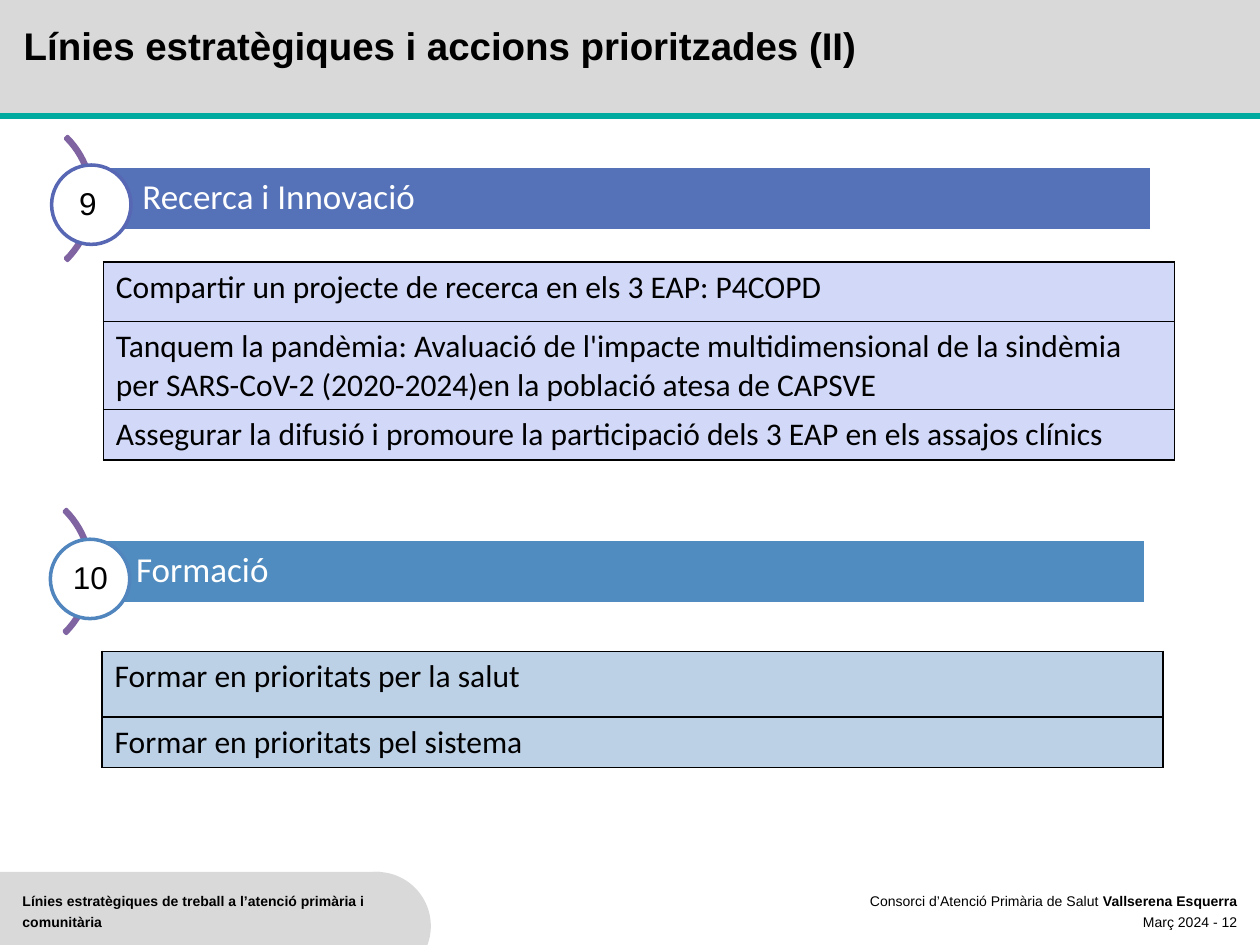
from lxml.etree import SubElement
from pptx import Presentation
from pptx.dml.color import RGBColor
from pptx.enum.shapes import MSO_CONNECTOR, MSO_SHAPE
from pptx.enum.text import MSO_ANCHOR, PP_ALIGN
from pptx.oxml.ns import qn
from pptx.util import Inches, Pt

BLACK = RGBColor(0x00, 0x00, 0x00)
WHITE = RGBColor(0xFF, 0xFF, 0xFF)
GREY = RGBColor(0xD9, 0xD9, 0xD9)
TEAL = RGBColor(0x00, 0xAA, 0x9E)
PURPLE = RGBColor(0x80, 0x64, 0xA2)
INDIGO = RGBColor(0x55, 0x72, 0xB8)
INDIGO_RING = RGBColor(0x57, 0x67, 0xB4)
LAVENDER = RGBColor(0xD2, 0xD8, 0xF7)
BLUE = RGBColor(0x50, 0x8C, 0xBF)
BLUE_RING = RGBColor(0x51, 0x85, 0xBD)
PALE_BLUE = RGBColor(0xBC, 0xD0, 0xE6)

COLUMNS, ROWS = 100, 75
WIDTH, HEIGHT = Inches(10), Inches(7.5)


class SlideBuilder:
    heading_font = "Arial"
    body_font = "Calibri"

    def __init__(self, page):
        self.page = page

    def grid(self, left, top, width, height):
        across, down = WIDTH / COLUMNS, HEIGHT / ROWS
        return (round(left * across), round(top * down),
                round(width * across), round(height * down))

    def shape(self, kind, place, fill=None, line=None, adjustments=()):
        shape = self.page.shapes.add_shape(kind, *self.grid(*place))
        shape.shadow.inherit = False
        for index, value in enumerate(adjustments):
            shape.adjustments[index] = value
        if fill is None:
            shape.fill.background()
        else:
            shape.fill.solid()
            shape.fill.fore_color.rgb = fill
        if line is None:
            shape.line.fill.background()
        else:
            shape.line.color.rgb = line
            shape.line.width = Pt(2)
        return shape

    def rule(self, row, color):
        left, top, width, _ = self.grid(0, row, COLUMNS, 0)
        rule = self.page.shapes.add_connector(
            MSO_CONNECTOR.STRAIGHT, left, top, left + width, top)
        rule.line.color.rgb = color
        rule.line.width = Pt(3)
        SubElement(rule._element.spPr, qn("a:effectLst"))

    def span(self, para, text, size, font, color=BLACK, bold=False):
        span = para.add_run()
        span.text = text
        span.font.size = Pt(size)
        span.font.name = font
        span.font.color.rgb = color
        span.font.bold = bold

    def text(self, place, lines, size, spacing=None, align=PP_ALIGN.LEFT):
        box = self.page.shapes.add_textbox(*self.grid(*place))
        frame = box.text_frame
        frame.word_wrap = True
        for index, spans in enumerate(lines):
            para = frame.add_paragraph() if index else frame.paragraphs[0]
            para.alignment = align
            if spacing:
                para.line_spacing = Pt(spacing)
            for words, bold in spans:
                self.span(para, words, size, self.heading_font, bold=bold)

    def banner(self, place, title, fill):
        banner = self.shape(MSO_SHAPE.RECTANGLE, place, fill, WHITE)
        frame = banner.text_frame
        frame.word_wrap = True
        frame.vertical_anchor = MSO_ANCHOR.MIDDLE
        frame.margin_left = Inches(0.41)
        frame.margin_top = frame.margin_right = frame.margin_bottom = Inches(0.06)
        para = frame.paragraphs[0]
        para.alignment = PP_ALIGN.LEFT
        para.line_spacing = 0.9
        self.span(para, title, 20, self.body_font, WHITE)

    def section(self, arc, banner, ring, number_place, number, title, fill, ring_color):
        self.shape(MSO_SHAPE.BLOCK_ARC, (*arc, 13.9, 13.9), None, PURPLE,
                   (189, 27, 0.017))
        self.banner((*banner, 84.2, 5.1), title, fill)
        self.shape(MSO_SHAPE.OVAL, (*ring, 6.3, 6.3), WHITE, ring_color)
        self.text(number_place, [[(number, False)]], 18)

    def border(self, cell):
        properties = cell._tc.get_or_add_tcPr()
        for side in ("a:lnL", "a:lnR", "a:lnT", "a:lnB"):
            line = SubElement(properties, qn(side), w=str(Pt(1)))
            paint = SubElement(line, qn("a:solidFill"))
            SubElement(paint, qn("a:srgbClr"), val=str(BLACK))

    def table(self, left, top, width, entries, fill):
        total = sum(height for height, _ in entries)
        frame = self.page.shapes.add_table(
            len(entries), 1, *self.grid(left, top, width, total))
        table = frame.table
        table.first_row = False
        table.horz_banding = False
        for index, (height, words) in enumerate(entries):
            table.rows[index].height = self.grid(0, 0, 0, height)[3]
            cell = table.cell(index, 0)
            self.border(cell)
            cell.fill.solid()
            cell.fill.fore_color.rgb = fill
            self.span(cell.text_frame.paragraphs[0], words, 18, self.body_font)


def main():
    deck = Presentation()
    deck.slide_width, deck.slide_height = WIDTH, HEIGHT
    slide = SlideBuilder(deck.slides.add_slide(deck.slide_layouts[6]))

    slide.shape(MSO_SHAPE.RECTANGLE, (0, 69.2, 30.2, 7.2), GREY)
    slide.shape(MSO_SHAPE.OVAL, (25.6, 69.2, 8.6, 8.6), GREY)
    slide.shape(MSO_SHAPE.RECTANGLE, (0, 0, COLUMNS, 9.2), GREY)
    slide.rule(9.2, TEAL)
    slide.text((0.8, 70, 30.2, 4.7), [
        [("Línies estratègiques de treball a l’atenció primària i comunitària", True)],
    ], 8, 12)
    slide.text((67.5, 70, 31.7, 5), [
        [("Consorci d’Atenció Primària de Salut ", False), ("Vallserena Esquerra", True)],
        [("Març 2024 - 12", False)],
    ], 8, 12, PP_ALIGN.RIGHT)
    slide.text((0.9, 1.9, 85.3, 4.1), [
        [("Línies estratègiques i accions prioritzades (II)", True)],
    ], 22, 22)

    slide.section((-6.5, 8.8), (7.2, 13.2), (4.1, 13.1), (5.3, 14.1, 4.1, 4),
                  "9", "Recerca i Innovació", INDIGO, INDIGO_RING)
    slide.table(8.2, 20.8, 85, [
        (4.7, "Compartir un projecte de recerca en els 3 EAP: P4COPD"),
        (7, "Tanquem la pandèmia: Avaluació de l'impacte multidimensional de la "
            "sindèmia per SARS-CoV-2 (2020-2024)en la població atesa de CAPSVE"),
        (4, "Assegurar la difusió i promoure la participació dels 3 EAP en els "
            "assajos clínics"),
    ], LAVENDER)

    slide.section((-6.6, 38.4), (6.7, 42.8), (4, 42.8), (4.8, 43.8, 5, 4),
                  "10", "Formació", BLUE, BLUE_RING)
    slide.table(8.1, 51.7, 84.2, [
        (5.2, "Formar en prioritats per la salut"),
        (4, "Formar en prioritats pel sistema"),
    ], PALE_BLUE)

    deck.save("out.pptx")


if __name__ == "__main__":
    main()
